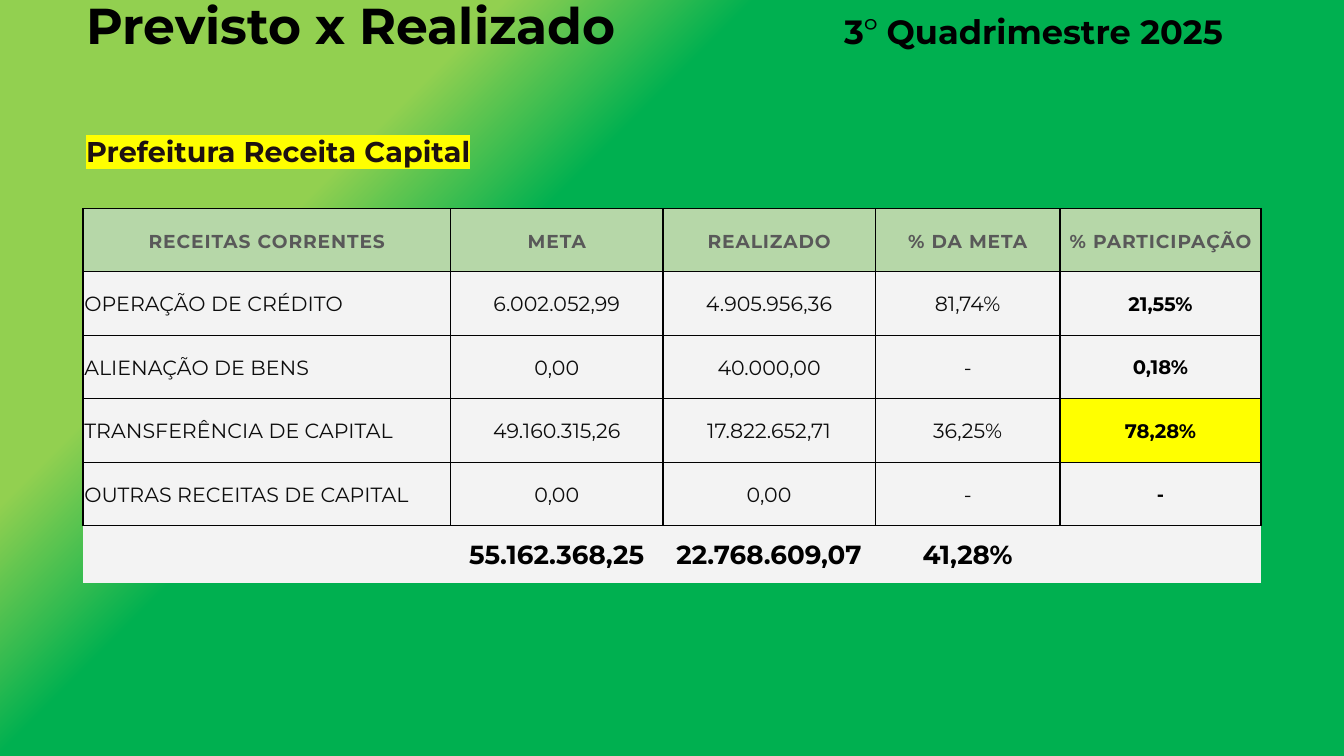
from pptx import Presentation
from pptx.dml.color import RGBColor as Rgb
from pptx.enum.text import MSO_ANCHOR as Anchor, MSO_AUTO_SIZE as Auto, PP_ALIGN as Align
from pptx.oxml import parse_xml
from pptx.oxml.ns import nsdecls
from pptx.util import Inches, Pt

BLACK, INK, GREY = "000000", "0D0D0D", "595959"
PALE, MINT, YELLOW = "F3F3F3", "B6D7A8", "FFFF00"
LIME, GREEN = "92D050", "00B050"


def rgb(code):
    return Rgb.from_string(code)


def node(tag, attrs="", inner=""):
    return parse_xml(f'<a:{tag} {nsdecls("a")} {attrs}>{inner}</a:{tag}>')


def solid(code):
    return f'<a:solidFill><a:srgbClr val="{code}"/></a:solidFill>'


class Deck:
    font = "Montserrat"

    def __init__(self, wide, high):
        self.prs = Presentation()
        self.prs.slide_width = Inches(wide)
        self.prs.slide_height = Inches(high)
        self.slide = self.prs.slides.add_slide(self.prs.slide_layouts[5])

    def x(self, pct):
        return int(self.prs.slide_width * pct / 100)

    def y(self, pct):
        return int(self.prs.slide_height * pct / 100)

    def box(self, left, top, width, height):
        return self.x(left), self.y(top), self.x(width), self.y(height)

    def back(self, stops, angle):
        fill = self.slide.background.fill
        fill.gradient()
        grad = self.slide.background._cSld.bg.bgPr.find(".//" + node("gradFill").tag)
        for child in list(grad):
            grad.remove(child)
        marks = "".join(f'<a:gs pos="{pos * 1000}"><a:srgbClr val="{code}"/></a:gs>'
                        for pos, code in stops)
        grad.append(node("gsLst", "", marks))
        grad.append(node("lin", f'ang="{angle * 60000}" scaled="0"'))

    def run(self, para, text, size, color=BLACK, bold=True, mark=None, gap=0):
        run = para.add_run()
        run.text = text
        font = run.font
        font.size, font.bold = Pt(size), bold
        font.color.rgb = rgb(color)
        props = run._r.get_or_add_rPr()
        if mark:
            props.append(node("highlight", "", f'<a:srgbClr val="{mark}"/>'))
        if gap:
            props.set("spc", str(int(gap * 100)))
        font.name = self.font

    def title(self, place, lines, gap, tab):
        shape = self.slide.shapes.title
        shape.left, shape.top, shape.width, shape.height = self.box(*place)
        frame = shape.text_frame
        frame.word_wrap, frame.auto_size = True, Auto.NONE
        frame.vertical_anchor = Anchor.BOTTOM
        for i, runs in enumerate(lines):
            para = frame.add_paragraph() if i else frame.paragraphs[0]
            para.alignment, para.line_spacing = Align.LEFT, 1.5
            para.space_before = Pt(gap if i else 0)
            if not i:
                para._p.get_or_add_pPr().append(
                    node("tabLst", "", f'<a:tab pos="{self.x(tab)}" algn="l"/>'))
            for args in runs:
                self.run(para, **args)

    def edges(self, cell, sides):
        props = cell._tc.get_or_add_tcPr()
        for side in "LRTB":
            inner = solid(BLACK) if side in sides else "<a:noFill/>"
            props.append(node("ln" + side, f'w="{Pt(0.75)}"', inner))

    def cell(self, cell, text, fill, sides, style, head, left):
        side, top, low = (0.03, 0.02, 0.02) if head else (0.01, 0.01, 0)
        cell.margin_left = cell.margin_right = Inches(side)
        cell.margin_top, cell.margin_bottom = Inches(top), Inches(low)
        cell.vertical_anchor = Anchor.MIDDLE
        self.edges(cell, sides)
        cell.fill.solid()
        cell.fill.fore_color.rgb = rgb(fill)
        if text:
            para = cell.text_frame.paragraphs[0]
            para.alignment = Align.LEFT if left else Align.CENTER
            if head:
                para.line_spacing = 1.15
            self.run(para, text, **style)

    def table(self, left, top, cols, highs, rows, peak):
        place = self.box(left, top, sum(cols), sum(highs))
        table = self.slide.shapes.add_table(len(rows), len(cols), *place).table
        for col, width in zip(table.columns, cols):
            col.width = self.x(width)
        for row, high in zip(table.rows, highs):
            row.height = self.y(high)
        final = len(rows) - 1
        for r, row in enumerate(rows):
            for c, text in enumerate(row):
                fill = MINT if r == 0 else PALE
                if r == 0:
                    style = dict(size=10, color=GREY, gap=0.5)
                elif r == final:
                    style = dict(size=14)
                elif c == len(cols) - 1:
                    style = dict(size=10 if text == "-" else 10.5)
                else:
                    style = dict(size=11, color=INK, bold=False)
                if text == peak:
                    fill = style["mark"] = YELLOW
                self.cell(table.cell(r, c), text, fill, "T" if r == final else "LRTB",
                          style, head=r == 0, left=c == 0 and r > 0)


ROWS = [
    ["RECEITAS CORRENTES", "META", "REALIZADO", "% DA META", "% PARTICIPAÇÃO"],
    ["OPERAÇÃO DE CRÉDITO", "6.002.052,99", "4.905.956,36", "81,74%", "21,55%"],
    ["ALIENAÇÃO DE BENS", "0,00", "40.000,00", "-", "0,18%"],
    ["TRANSFERÊNCIA DE CAPITAL", "49.160.315,26", "17.822.652,71", "36,25%", "78,28%"],
    ["OUTRAS RECEITAS DE CAPITAL", "0,00", "0,00", "-", "-"],
    ["", "55.162.368,25", "22.768.609,07", "41,28%", ""],
]
LINES = [
    [dict(text="Previsto x Realizado\t", size=27),
     dict(text="3", size=18),
     dict(text="º ", size=18, bold=False),
     dict(text="Quadrimestre 2025", size=18)],
    [dict(text="Prefeitura Receita Capital", size=15.3, color="1D1111", mark=YELLOW)],
]


def main():
    deck = Deck(10, 10 * 9 / 16)
    deck.back([(0, LIME), (24, LIME), (36, GREEN), (100, GREEN)], 45)
    deck.table(6.18, 27.56, [27.35, 15.8, 15.8, 13.75, 14.95],
               [8.4] * 5 + [7.5], ROWS, "78,28%")
    deck.title((5.4, 6.76, 86.8, 16.36), LINES, gap=33, tab=56.4)
    deck.prs.save("out.pptx")


if __name__ == "__main__":
    main()
